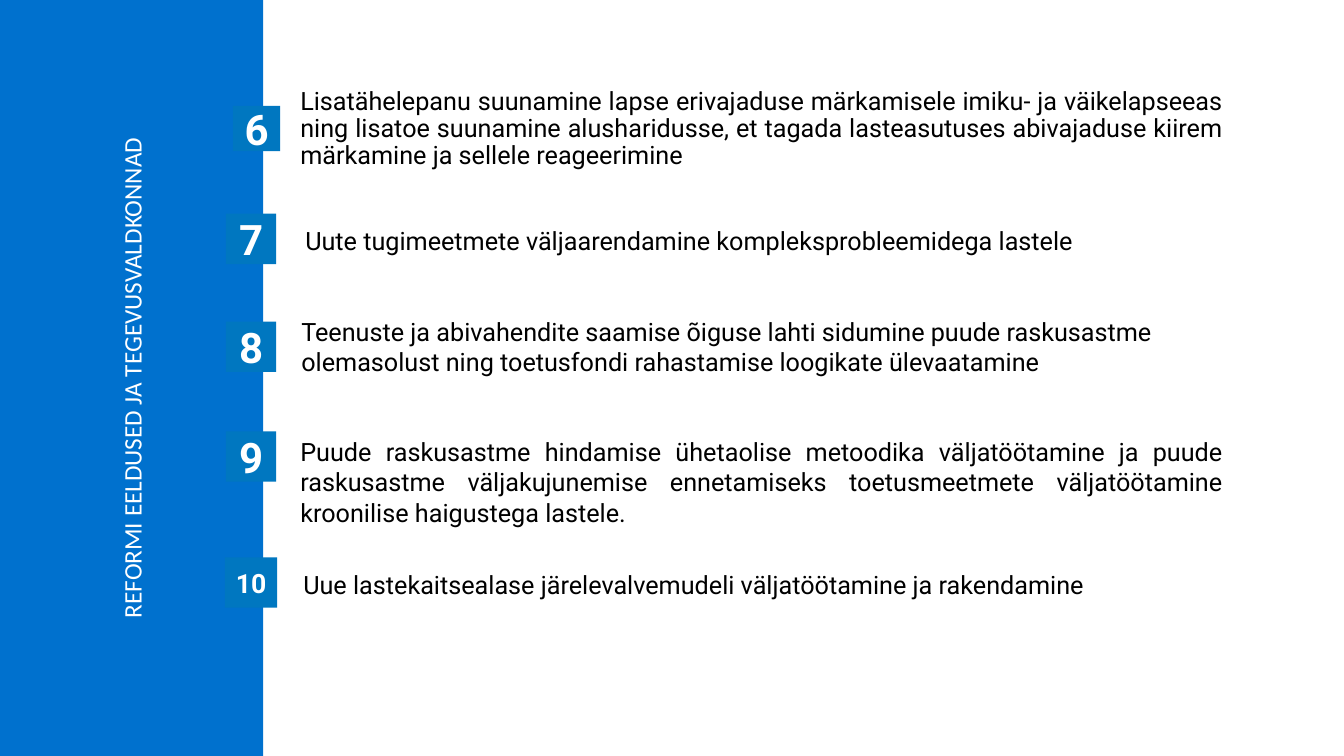
from pptx import Presentation
from pptx.dml.color import RGBColor
from pptx.enum import shapes, text
from pptx.util import Inches, Pt

WHITE, BLACK = "FFFFFF", "000000"
SIDEBAR_BLUE, BADGE_BLUE = "0071CE", "0077C0"
LEFT, CENTER, JUSTIFY = text.PP_ALIGN.LEFT, text.PP_ALIGN.CENTER, text.PP_ALIGN.JUSTIFY

# number, number size, badge box, text box, alignment, wording
ACTIONS = [
    ("6", 30, (2.31, 1.05, 0.47, 0.45), (2.88, 0.83, 9.35, 0.92), JUSTIFY,
     "Lisatähelepanu suunamine lapse erivajaduse märkamisele imiku- ja väikelapseeas "
     "ning lisatoe suunamine alusharidusse, et tagada lasteasutuses abivajaduse kiirem "
     "märkamine ja sellele reageerimine"),
    ("7", 30, (2.24, 2.12, 0.5, 0.5), (2.93, 2.19, 9.43, 0.4), LEFT,
     "Uute tugimeetmete väljaarendamine kompleksprobleemidega lastele"),
    ("8", 30, (2.24, 3.19, 0.5, 0.5), (2.89, 3.09, 9.35, 0.71), LEFT,
     "Teenuste ja abivahendite saamise õiguse lahti sidumine puude raskusastme "
     "olemasolust ning toetusfondi rahastamise loogikate ülevaatamine"),
    ("9", 30, (2.24, 4.28, 0.5, 0.5), (2.88, 4.28, 9.35, 1.01), JUSTIFY,
     "Puude raskusastme hindamise ühetaolise metoodika väljatöötamine ja puude "
     "raskusastme väljakujunemise ennetamiseks toetusmeetmete väljatöötamine "
     "kroonilise haigustega lastele."),
    ("10", 19, (2.23, 5.53, 0.52, 0.5), (2.91, 5.6, 9.83, 0.4), JUSTIFY,
     "Uue lastekaitsealase järelevalvemudeli väljatöötamine ja rakendamine"),
]


def color(value):
    """Return the colour for a hex string."""
    return RGBColor.from_string(value)


def write(shape, wording, size, font_color, alignment, font_name="Roboto", bold=False):
    """Put one formatted paragraph into a shape and return it."""
    shape.text_frame.word_wrap = True
    shape.text_frame.text = wording
    paragraph = shape.text_frame.paragraphs[0]
    paragraph.alignment = alignment
    font = paragraph.runs[0].font
    font.name, font.size, font.bold = font_name, Pt(size), bold
    font.color.rgb = color(font_color)
    return paragraph


def add_block(slide, box, fill):
    """Add a plain filled rectangle with vertically centred text."""
    block = slide.shapes.add_shape(shapes.MSO_SHAPE.RECTANGLE, *map(Inches, box))
    block.shadow.inherit = False
    block.fill.solid()
    block.fill.fore_color.rgb = color(fill)
    block.line.fill.background()
    block.text_frame.vertical_anchor = text.MSO_ANCHOR.MIDDLE
    return block


def add_sidebar(slide, title):
    """Add the blue sidebar with its title reading upwards."""
    sidebar = add_block(slide, (0, 0, 2.61, 7.5), SIDEBAR_BLUE)
    write(sidebar, title, 18, WHITE, CENTER, "Calibri")
    sidebar.text_frame._txBody.bodyPr.set("vert", "vert270")


def add_action(slide, number, number_size, badge_box, text_box, alignment, wording):
    """Add a numbered badge and its description, and return the paragraph."""
    badge = add_block(slide, badge_box, BADGE_BLUE)
    write(badge, number, number_size, WHITE, CENTER, bold=True)
    description = slide.shapes.add_textbox(*map(Inches, text_box))
    return write(description, wording, 18, BLACK, alignment)


def main():
    """Build the slide and save it."""
    presentation = Presentation()
    presentation.slide_width = Inches(13.33)
    presentation.slide_height = Inches(7.5)
    slide = presentation.slides.add_slide(presentation.slide_layouts[6])
    add_sidebar(slide, "REFORMI EELDUSED JA TEGEVUSVALDKONNAD")
    paragraphs = [add_action(slide, *action) for action in ACTIONS]
    paragraphs[0].line_spacing = 0.9
    paragraphs[0].space_before = Pt(10)
    presentation.save("out.pptx")


if __name__ == "__main__":
    main()
